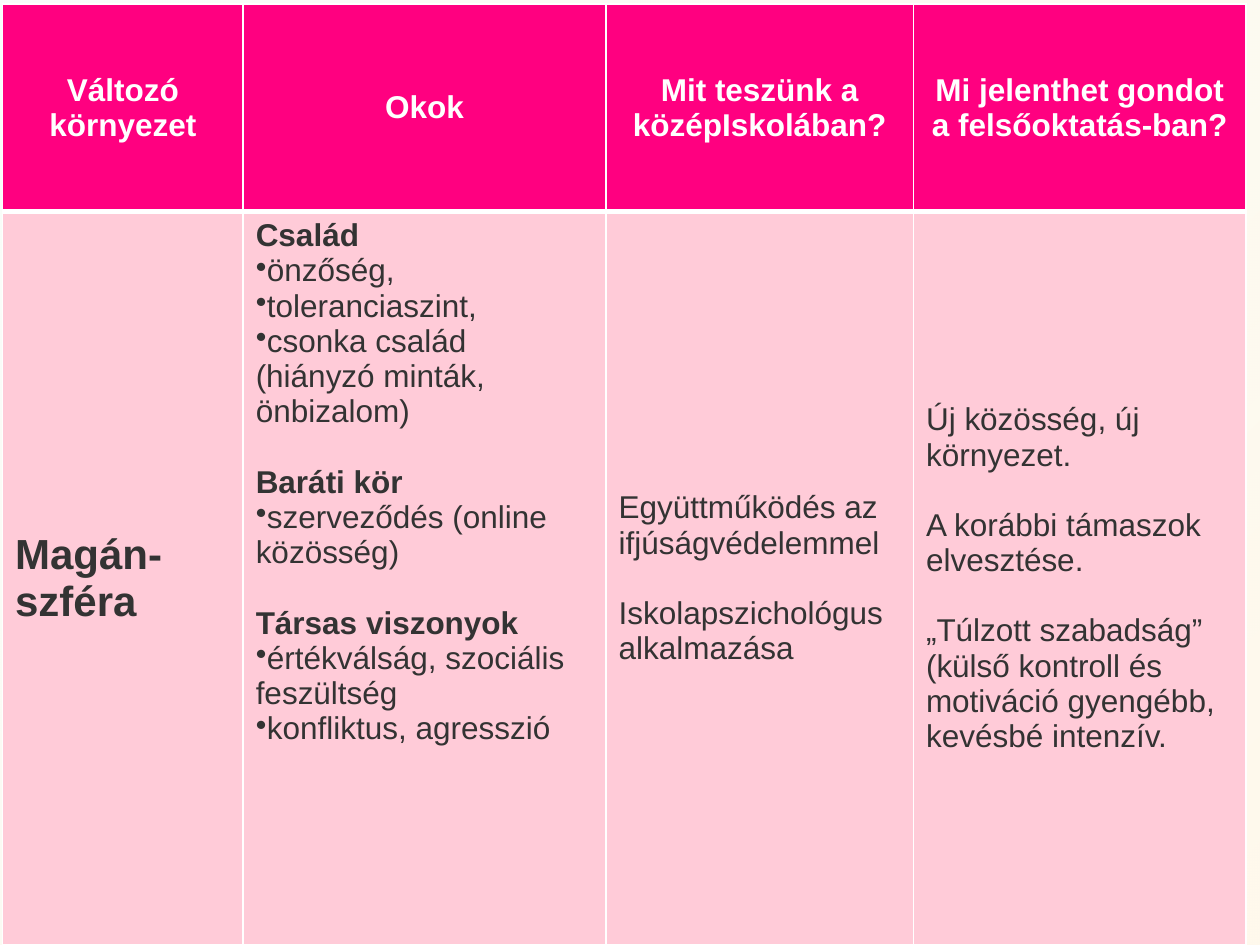
from dataclasses import dataclass

from lxml.etree import SubElement
from pptx import Presentation
from pptx.dml.color import RGBColor
from pptx.enum.shapes import MSO_SHAPE
from pptx.enum.text import MSO_ANCHOR, PP_ALIGN
from pptx.oxml.ns import qn
from pptx.util import Inches, Pt


@dataclass(frozen=True)
class Theme:
    font: str = "Arial"
    header_fill: str = "FF0080"
    body_fill: str = "FFCBD8"
    light: str = "FFFFFF"
    dark: str = "333333"
    backdrop: tuple = (("F2FDF7", 48), ("FFEFCC", 36))  # colour, opacity in percent
    text_size: int = 18
    topic_size: int = 24
    group_gap: int = 20
    thin_border: int = 1
    thick_border: int = 3


THEME = Theme()

COLUMN_WIDTHS = (1.91, 2.88, 2.44, 2.64)
ROW_HEIGHTS = (1.65, 5.82)

HEADERS = (
    "Változó környezet",
    "Okok",
    "Mit teszünk a középIskolában?",
    "Mi jelenthet gondot a felsőoktatás-ban?",
)
TOPIC = "Magán-szféra"
CAUSES = {
    "Család": ("önzőség,", "toleranciaszint,", "csonka család (hiányzó minták, önbizalom)"),
    "Baráti kör": ("szerveződés (online közösség)",),
    "Társas viszonyok": ("értékválság, szociális feszültség", "konfliktus, agresszió"),
}
ACTIONS = ("Együttműködés az ifjúságvédelemmel", "Iskolapszichológus alkalmazása")
PROBLEMS = (
    "Új közösség, új környezet.",
    "A korábbi támaszok elvesztése.",
    "„Túlzott szabadság” (külső kontroll és motiváció gyengébb, kevésbé intenzív.",
)


def add_backdrop(slide, left, top, width, height):
    """Translucent diagonal gradient behind the table."""
    shape = slide.shapes.add_shape(MSO_SHAPE.RECTANGLE, left, top, width, height)
    shape.shadow.inherit = False
    shape.line.fill.background()
    shape.fill.gradient()
    shape.fill.gradient_angle = 315
    for stop, (color, _) in zip(shape.fill.gradient_stops, THEME.backdrop):
        stop.color.rgb = RGBColor.from_string(color)
    colors = shape._element.spPr.iter(qn("a:srgbClr"))
    for element, (_, opacity) in zip(colors, THEME.backdrop):
        SubElement(element, qn("a:alpha"), val=str(opacity * 1000))


def style_cell(cell, is_header):
    """Borders, fill and anchor; the rule under the header is thick."""
    properties = cell._tc.get_or_add_tcPr()
    thick_side = "B" if is_header else "T"
    for side in "LRTB":
        width = THEME.thick_border if side == thick_side else THEME.thin_border
        line = SubElement(properties, qn(f"a:ln{side}"), w=str(Pt(width)))
        SubElement(SubElement(line, qn("a:solidFill")), qn("a:srgbClr"), val=THEME.light)
    cell.fill.solid()
    fill = THEME.header_fill if is_header else THEME.body_fill
    cell.fill.fore_color.rgb = RGBColor.from_string(fill)
    cell.vertical_anchor = MSO_ANCHOR.MIDDLE


def add_text(cell, text, color=THEME.dark, size=THEME.text_size, bold=False,
             bullet=False, starts_group=False):
    """Write the next paragraph of a cell."""
    frame = cell.text_frame
    is_first = not frame.text
    paragraph = frame.paragraphs[0] if is_first else frame.add_paragraph()
    paragraph.text = text
    if starts_group and not is_first:
        paragraph.space_before = Pt(THEME.group_gap)
    if bullet:
        SubElement(paragraph._p.get_or_add_pPr(), qn("a:buChar"), char="•")
    paragraph.font.name = THEME.font
    paragraph.font.size = Pt(size)
    paragraph.font.bold = bold
    paragraph.font.color.rgb = RGBColor.from_string(color)
    return paragraph


def fill_header(cells):
    for cell, title in zip(cells, HEADERS):
        style_cell(cell, is_header=True)
        add_text(cell, title, color=THEME.light, bold=True).alignment = PP_ALIGN.CENTER


def fill_body(cells):
    for cell in cells:
        style_cell(cell, is_header=False)
    topic, causes, actions, problems = cells

    add_text(topic, TOPIC, size=THEME.topic_size, bold=True)

    # Causes: bold headings with bulleted items
    causes.vertical_anchor = MSO_ANCHOR.TOP
    for heading, items in CAUSES.items():
        add_text(causes, heading, bold=True, starts_group=True)
        for item in items:
            add_text(causes, item, bullet=True)

    # Actions and problems: spaced plain paragraphs
    for cell, texts in ((actions, ACTIONS), (problems, PROBLEMS)):
        for text in texts:
            add_text(cell, text, starts_group=True)


def add_environment_table(slide, left, top, width, height):
    shape = slide.shapes.add_table(
        len(ROW_HEIGHTS), len(COLUMN_WIDTHS), left, top, width, height)
    table = shape.table
    for column, column_width in zip(table.columns, COLUMN_WIDTHS):
        column.width = Inches(column_width)
    for row, row_height in zip(table.rows, ROW_HEIGHTS):
        row.height = Inches(row_height)
    header, body = table.rows
    fill_header(header.cells)
    fill_body(body.cells)


def main():
    presentation = Presentation()
    presentation.slide_width = Inches(10)
    presentation.slide_height = Inches(7.5)
    slide = presentation.slides.add_slide(presentation.slide_layouts[6])
    add_backdrop(slide, 0, 0, presentation.slide_width, presentation.slide_height)
    add_environment_table(slide, Inches(0.02), Inches(0.03),
                          Inches(sum(COLUMN_WIDTHS)), Inches(sum(ROW_HEIGHTS)))
    presentation.save("out.pptx")


if __name__ == "__main__":
    main()
